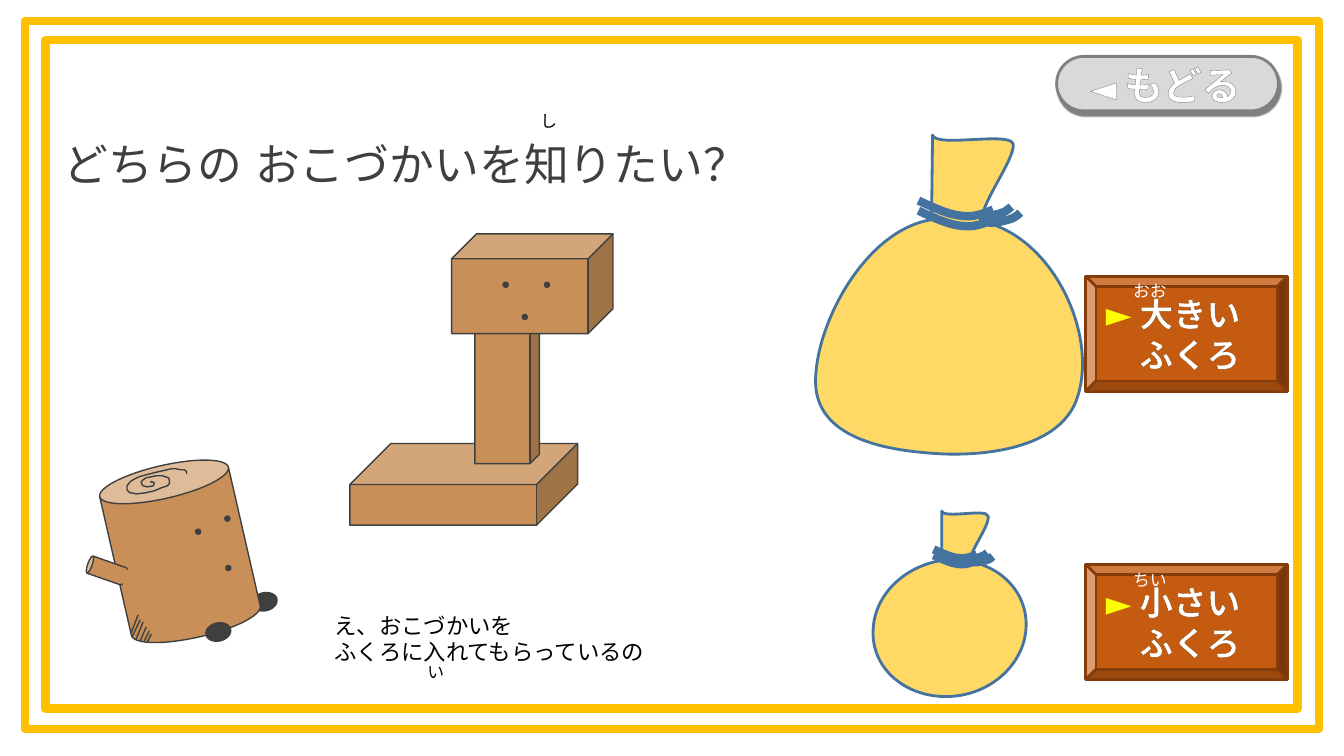
from lxml.etree import SubElement
from pptx import Presentation
from pptx.dml.color import RGBColor
from pptx.enum.shapes import MSO_CONNECTOR, MSO_SHAPE as Preset
from pptx.enum.text import MSO_ANCHOR, MSO_AUTO_SIZE, PP_ALIGN
from pptx.oxml.ns import qn
from pptx.util import Inches, Pt

COLORS = {
    "frame": "FFC000", "title": "3F3F3F", "ink": "3F3F3F", "edge": "404040",
    "wood": "C89058", "sack": "FFD966", "string": "43739E", "sign": "C55A11",
    "sign_edge": "843C0B", "sign_outline": "8E4700", "pointer": "FFFF00",
    "white": "FFFFFF", "black": "000000", "button": "D9D9D9", "gray": "808080",
}
PLAIN, HEAVY = "Arial", "Noto Sans CJK JP"
TILT = -12.9

BIG_SACK = [
    (9.25, 1.34), (9.28, 1.47), (10.02, 1.3), (10.05, 1.43), (10.07, 1.58), (9.71, 2.04),
    (9.74, 2.2), (10.43, 2.34), (10.89, 3.3), (10.69, 3.93), (10.53, 4.47), (9.71, 4.53),
    (9.28, 4.5), (8.84, 4.47), (8.06, 4.37), (8.09, 3.75), (8.11, 3.17), (8.6, 2.28), (9.24, 2.18),
]
SMALL_SACK = [
    (9.34, 5.07), (9.36, 5.15), (9.79, 5.04), (9.8, 5.12), (9.82, 5.21), (9.61, 5.48),
    (9.62, 5.57), (10.03, 5.65), (10.26, 6.01), (10.15, 6.38), (10.05, 6.7), (9.72, 6.92),
    (9.36, 6.91), (8.95, 6.9), (8.64, 6.61), (8.66, 6.25), (8.67, 5.91), (8.96, 5.62), (9.34, 5.56),
]
LONG_STRAND = [(0, 0), (0.15, 0.07), (0.3, 0.14), (0.42, 0.15), (0.55, 0.17), (0.64, 0.13), (0.74, 0.09)]
SHORT_STRAND = [(0, 0), (0.07, 0), (0.14, -0.01), (0.2, -0.03), (0.25, -0.04), (0.29, -0.07), (0.32, -0.1)]
STRANDS = [(LONG_STRAND, 0, 0.1), (LONG_STRAND, 0, 0),
           (SHORT_STRAND, 0.6, 0.16), (SHORT_STRAND, 0.69, 0.22)]
GRAIN = [
    (1.49, 4.78), (1.51, 4.78), (1.53, 4.79), (1.52, 4.82), (1.46, 4.83), (1.42, 4.82),
    (1.41, 4.81), (1.4, 4.78), (1.42, 4.76), (1.45, 4.74), (1.55, 4.72), (1.61, 4.72),
    (1.67, 4.74), (1.68, 4.76), (1.68, 4.8), (1.66, 4.82), (1.6, 4.84), (1.53, 4.87),
    (1.44, 4.89), (1.35, 4.9), (1.31, 4.89), (1.29, 4.89), (1.26, 4.86), (1.26, 4.82),
    (1.29, 4.78), (1.32, 4.76), (1.38, 4.73), (1.45, 4.71), (1.53, 4.69), (1.7, 4.65),
    (1.74, 4.65), (1.79, 4.66), (1.83, 4.66), (1.85, 4.68), (1.85, 4.7),
]
HATCHING = [
    (1.37, 6.1, 1.3, 6.28), (1.39, 6.15, 1.31, 6.32), (1.42, 6.17, 1.35, 6.34),
    (1.45, 6.22, 1.39, 6.36), (1.48, 6.26, 1.43, 6.36), (1.5, 6.29, 1.46, 6.37),
]


def rgb(name):
    return RGBColor.from_string(COLORS[name])


def paint(shape, fill=None, line=None, width=1):
    shape.shadow.inherit = False
    if fill:
        shape.fill.solid()
        shape.fill.fore_color.rgb = rgb(fill)
    else:
        shape.fill.background()
    if line:
        shape.line.color.rgb = rgb(line)
        shape.line.width = Pt(width)
    else:
        shape.line.fill.background()


def add_preset(page, kind, at, fill=None, line=None, width=1, adjust=None, turn=0):
    shape = page.shapes.add_shape(kind, *map(Inches, at))
    paint(shape, fill, line, width)
    if adjust is not None:
        shape.adjustments[0] = adjust
    shape.rotation = turn
    return shape


def add_dots(page, spots):
    for left, top in spots:
        add_preset(page, Preset.OVAL, (left, top, 0.05, 0.05), "ink", "ink")


def add_outline(page, points, fill=None, line="ink", width=1, close=False, curved=False):
    start, *rest = [(Inches(x), Inches(y)) for x, y in points]
    builder = page.shapes.build_freeform(*start)
    builder.add_line_segments(rest, close=close)
    shape = builder.convert_to_shape()
    paint(shape, fill, line, width)
    if curved:
        bend(shape)


def bend(shape):
    segments = list(shape.element.iter(qn("a:lnTo")))
    for index in range(0, len(segments), 3):
        trio = segments[index:index + 3]
        curve = trio[0].makeelement(qn("a:cubicBezTo"))
        trio[0].addprevious(curve)
        for segment in trio:
            curve.append(segment[0])
            segment.getparent().remove(segment)


def add_sack(page, outline, left, top, scale, strand_fill=None):
    add_outline(page, outline, "sack", "string", 2, close=True, curved=True)
    for strand, dx, dy in STRANDS:
        points = [(left + scale * (dx + x), top + scale * (dy + y)) for x, y in strand]
        add_outline(page, points, strand_fill, "string", 6, curved=True)


def add_hatching(page):
    for ends in HATCHING:
        stroke = page.shapes.add_connector(MSO_CONNECTOR.STRAIGHT, *map(Inches, ends))
        stroke.line.color.rgb = rgb("ink")
        stroke.line.width = Pt(1)
        SubElement(stroke.element.spPr, qn("a:effectLst"))


def set_east_asian(properties, name):
    SubElement(properties, qn("a:ea")).set("typeface", name)


def add_text(page, at, lines, size, color="black", spacing=None):
    box = page.shapes.add_textbox(*map(Inches, at))
    frame = box.text_frame
    frame.word_wrap = True
    frame.auto_size = MSO_AUTO_SIZE.SHAPE_TO_FIT_TEXT
    for index, line in enumerate(lines):
        para = frame.add_paragraph() if index else frame.paragraphs[0]
        if spacing:
            para.line_spacing = spacing
        span = para.add_run()
        span.text = line
        span.font.size = Pt(size)
        span.font.name = PLAIN
        span.font.color.rgb = rgb(color)
        set_east_asian(span.font._element if hasattr(span.font, "_element") else span._r.get_or_add_rPr(), PLAIN)


def add_outlined_span(para, text, size, color, outline, width=1):
    span = para.add_run()
    span.text = text
    span.font.size = Pt(size)
    span.font.bold = True
    span.font.name = HEAVY
    span.font.color.rgb = rgb(color)
    properties = span._r.get_or_add_rPr()
    set_east_asian(properties, HEAVY)
    border = properties.makeelement(qn("a:ln"), {"w": str(Pt(width))})
    solid = SubElement(border, qn("a:solidFill"))
    SubElement(solid, qn("a:srgbClr")).set("val", COLORS[outline])
    properties.insert(0, border)


def add_sign(page, top, word):
    sign = add_preset(page, Preset.BEVEL, (10.77, top, 2, 1.14), "sign", "sign_edge", 2, 0.088)
    frame = sign.text_frame
    frame.vertical_anchor = MSO_ANCHOR.MIDDLE
    first, second = frame.paragraphs[0], frame.add_paragraph()
    for para in (first, second):
        para.alignment = PP_ALIGN.LEFT
        para.line_spacing = Pt(29)
    add_outlined_span(first, "►", 24, "pointer", "sign_outline")
    add_outlined_span(first, " " + word, 24, "white", "sign_outline")
    add_outlined_span(second, "　ふくろ", 24, "white", "sign_outline")


def add_back_button(page):
    button = add_preset(page, Preset.ROUNDED_RECTANGLE, (10.48, 0.56, 2.2, 0.54),
                        "button", "gray", 2, 0.5)
    effects = button.element.spPr.find(qn("a:effectLst"))
    shadow = SubElement(effects, qn("a:outerShdw"), blurRad=str(Pt(1)), dist=str(Pt(3)),
                        dir=str(68 * 60000), algn="tl", rotWithShape="0")
    tint = SubElement(shadow, qn("a:srgbClr"), val=COLORS["black"])
    SubElement(tint, qn("a:alpha"), val="50000")
    label = page.shapes.add_textbox(*map(Inches, (10.46, 0.55, 2.2, 0.57)))
    label.text_frame.word_wrap = True
    label.text_frame.auto_size = MSO_AUTO_SIZE.SHAPE_TO_FIT_TEXT
    para = label.text_frame.paragraphs[0]
    para.alignment = PP_ALIGN.CENTER
    para.line_spacing = Pt(34)
    add_outlined_span(para, "◄ ", 24, "white", "gray")
    add_outlined_span(para, "もどる", 28, "white", "gray", 1.5)


def add_block_figure(page):
    for at, depth in (((3.47, 4.4, 2.26, 0.81), 0.503), ((4.71, 2.67, 0.64, 1.93), 0.145),
                      ((4.48, 2.32, 1.6, 0.99), 0.25)):
        add_preset(page, Preset.CUBE, at, "wood", "edge", adjust=depth)
    add_dots(page, [(4.99, 2.8), (5.4, 2.8), (5.18, 3.12)])


def add_log_figure(page):
    add_preset(page, Preset.OVAL, (2.5, 5.88, 0.25, 0.18), "ink", "ink", turn=TILT)
    add_preset(page, Preset.CAN, (1.13, 4.6, 1.31, 1.74), "wood", "ink", adjust=0.25, turn=TILT)
    add_dots(page, [(1.94, 5.25), (2.23, 5.12), (2.24, 5.61)])
    add_preset(page, Preset.OVAL, (2.04, 6.18, 0.25, 0.18), "ink", "ink", turn=TILT)
    add_hatching(page)
    add_outline(page, GRAIN)
    add_preset(page, Preset.CAN, (0.97, 5.46, 0.18, 0.4), "wood", "ink", adjust=0.25, turn=289.3)
    add_preset(page, Preset.OVAL, (1.16, 5.65, 0.25, 0.15), "wood", turn=357.8)


def main():
    deck = Presentation()
    deck.slide_width, deck.slide_height = Inches(13.33), Inches(7.5)
    page = deck.slides.add_slide(deck.slide_layouts[6])
    for at in ((0.25, 0.21, 12.83, 7.02), (0.45, 0.4, 12.42, 6.63)):
        add_preset(page, Preset.RECTANGLE, at, line="frame", width=6)
    add_text(page, (0.53, 0.77, 7.15, 1.18), ["どちらの おこづかいを知りたい？"], 32, "title", 2.0)
    add_block_figure(page)
    add_log_figure(page)
    add_text(page, (3.22, 6.02, 4.12, 0.64), ["え、おこづかいを", "ふくろに入れてもらっているの"], 16)
    add_sack(page, BIG_SACK, 9.11, 1.99, 1)
    add_sack(page, SMALL_SACK, 9.26, 5.45, 0.58, "sack")
    add_sign(page, 2.74, "大きい")
    add_sign(page, 5.6, "小さい")
    for left, top, reading, color in ((5.26, 1.05, "し", "black"), (4.14, 6.52, "い", "black"),
                                      (11.14, 2.74, "おお", "white"), (11.14, 5.6, "ちい", "white")):
        add_text(page, (left, top, 0.82, 0.3), [reading], 12, color)
    add_back_button(page)


    deck.save("out.pptx")


if __name__ == "__main__":
    main()
